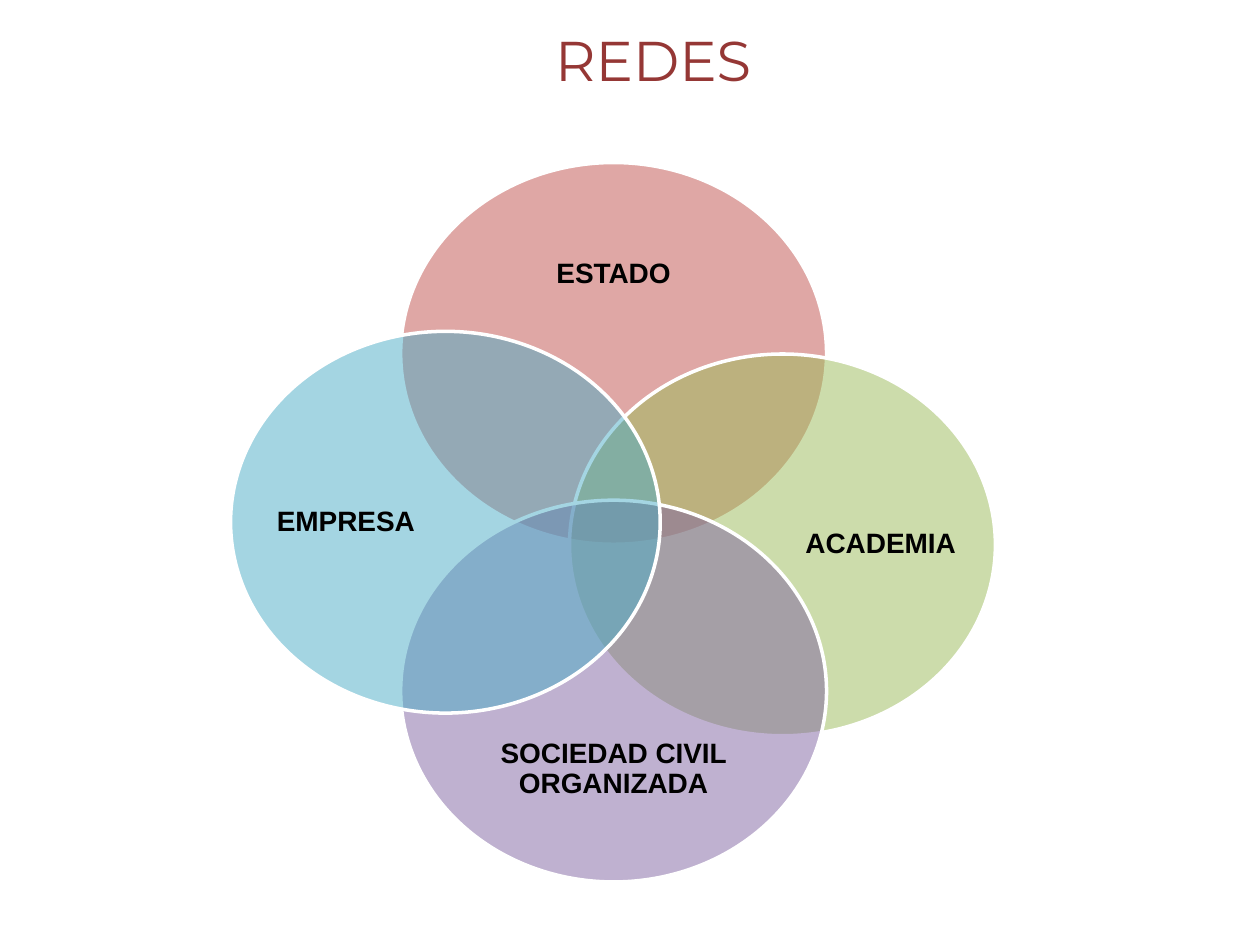
from lxml import etree
from pptx import Presentation
from pptx.dml.color import RGBColor
from pptx.enum.shapes import MSO_SHAPE
from pptx.enum.text import MSO_ANCHOR, PP_ALIGN
from pptx.oxml.ns import qn
from pptx.util import Inches, Pt

OVAL = MSO_SHAPE.OVAL
MIDDLE = MSO_ANCHOR.MIDDLE
CENTER, RIGHT = PP_ALIGN.CENTER, PP_ALIGN.RIGHT

COLORS = {
    "title": "953735",
    "label": "000000",
    "outline": "FFFFFF",
    "red": "C0504D",
    "green": "9BBB59",
    "purple": "8064A2",
    "blue": "4BACC6",
}

TITLE = "REDES "
TITLE_BOX = (2.58, 0, 3.6, 0.94)

# Sectors from back to front: label, color, ellipse box, label box
SECTORS = [
    ("ESTADO", "red", (3.18, 1.29, 3.38, 3.03), (3.57, 1.7, 2.6, 0.96)),
    ("ACADEMIA", "green", (4.52, 2.81, 3.38, 3.03), (6.34, 3.16, 1.3, 2.33)),
    ("SOCIEDAD CIVIL ORGANIZADA", "purple", (3.18, 3.97, 3.38, 3.03), (3.57, 5.63, 2.6, 0.96)),
    ("EMPRESA", "blue", (1.83, 2.63, 3.41, 3.03), (2.09, 2.98, 1.31, 2.33)),
]


def inches(box):
    return [Inches(value) for value in box]


def color(name):
    return RGBColor.from_string(COLORS[name])


def write(text_frame, text, font_name, size, color_name, alignment, bold=False):
    text_frame.text = text
    text_frame.word_wrap = True
    text_frame.vertical_anchor = MIDDLE
    paragraph = text_frame.paragraphs[0]
    paragraph.alignment = alignment
    font = paragraph.runs[0].font
    font.name, font.size, font.bold = font_name, Pt(size), bold
    font.color.rgb = color(color_name)
    return paragraph


def add_ellipse(slide, box, color_name):
    ellipse = slide.shapes.add_shape(OVAL, *inches(box))
    ellipse.shadow.inherit = False
    ellipse.fill.solid()
    ellipse.fill.fore_color.rgb = color(color_name)
    ellipse.line.color.rgb = color("outline")
    ellipse.line.width = Pt(2)
    # Half transparent, so that overlaps show
    fill_color = ellipse.fill._xPr.find(qn("a:solidFill"))[0]
    etree.SubElement(fill_color, qn("a:alpha"), val="50000")


def add_label(slide, box, text):
    text_frame = slide.shapes.add_textbox(*inches(box)).text_frame
    text_frame.margin_left = text_frame.margin_right = 0
    text_frame.margin_top = text_frame.margin_bottom = 0
    paragraph = write(text_frame, text, "Arial", 16, "label", CENTER, bold=True)
    paragraph.line_spacing = 0.9


def main():
    presentation = Presentation()
    presentation.slide_width, presentation.slide_height = Inches(10), Inches(7.5)
    slide = presentation.slides.add_slide(presentation.slide_layouts[5])

    # Title
    title = slide.shapes.title
    title.left, title.top, title.width, title.height = inches(TITLE_BOX)
    write(title.text_frame, TITLE, "Montserrat", 32, "title", RIGHT)

    # Venn diagram
    for text, color_name, ellipse_box, label_box in SECTORS:
        add_ellipse(slide, ellipse_box, color_name)
        add_label(slide, label_box, text)

    presentation.save("out.pptx")


if __name__ == "__main__":
    main()
